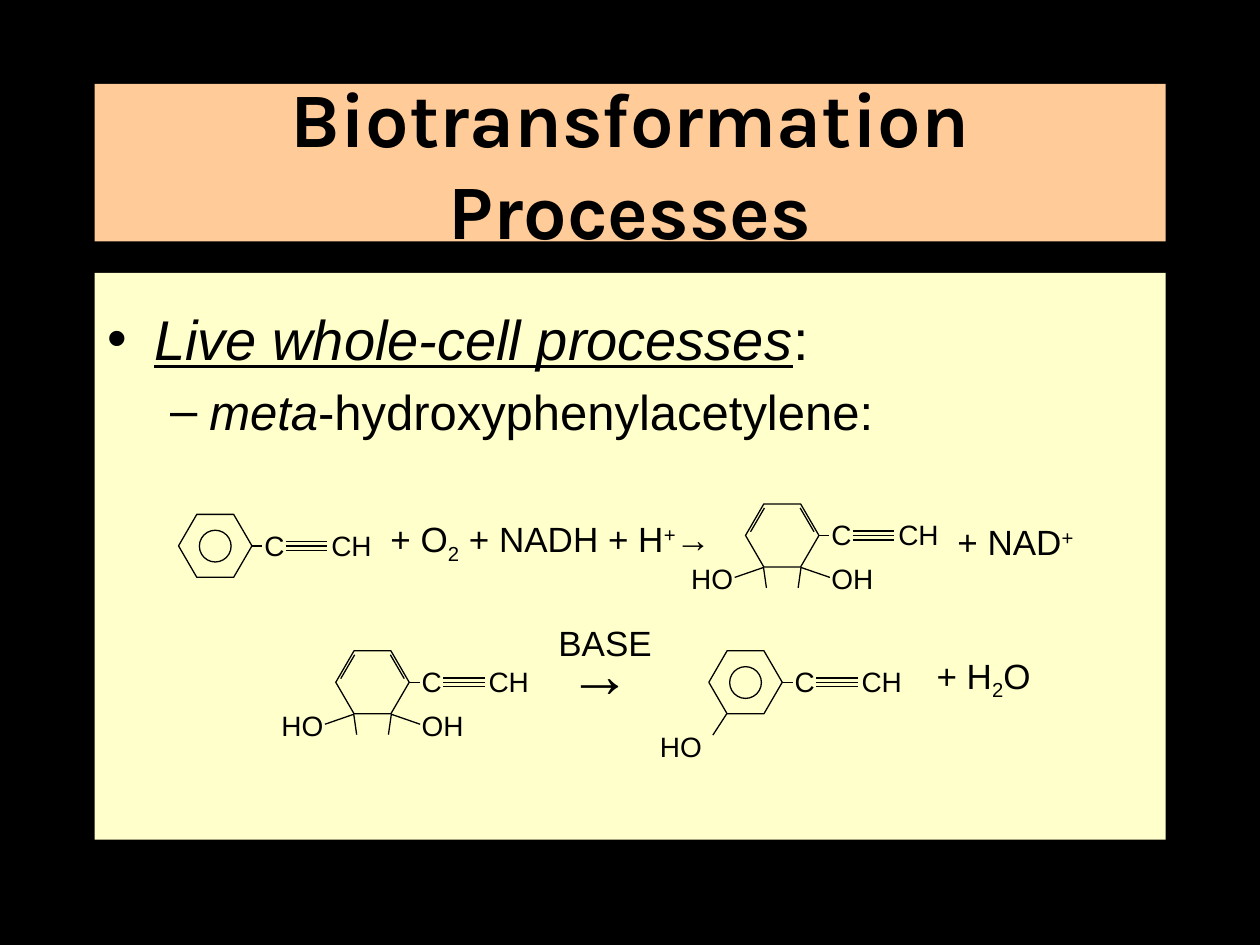
from lxml.etree import SubElement
from pptx import Presentation
from pptx.dml.color import RGBColor
from pptx.enum.shapes import MSO_CONNECTOR, MSO_SHAPE
from pptx.enum.text import MSO_ANCHOR, PP_ALIGN
from pptx.oxml.ns import qn
from pptx.util import Cm, Pt

COLORS = {"page": "000000", "title": "FFCC99", "body": "FFFFCC", "ink": "000000"}
RING_WIDTH, RING_HEIGHT = 1.48, 1.27
LABEL_WIDTH = 1.22
SUB, SUPER = {"baseline": "-25000"}, {"baseline": "30000"}
ITALIC = {"i": "1"}


def color(name):
    return RGBColor.from_string(COLORS[name])


def add_panel(page, top, height, fill):
    box = page.shapes.add_shape(
        MSO_SHAPE.RECTANGLE, Cm(1.91), Cm(top), Cm(21.59), Cm(height))
    box.shadow.inherit = False
    box.fill.solid()
    box.fill.fore_color.rgb = color(fill)
    box.line.fill.background()
    box.text_frame.word_wrap = True
    return box


def write(para, spans, size, font="Arial", align=PP_ALIGN.LEFT):
    para.alignment = align
    para.font.size = Pt(size)
    para.font.name = font
    para.font.color.rgb = color("ink")
    for text, attributes in spans:
        span = para.add_run()
        span.text = text
        for key, value in attributes.items():
            span._r.get_or_add_rPr().set(key, value)


def add_bullet(para, mark, margin, hang, space):
    para.space_before = Pt(space)
    properties = para._p.get_or_add_pPr()
    properties.set("marL", str(Cm(margin)))
    properties.set("indent", str(-Cm(hang)))
    SubElement(properties, qn("a:buFont")).set("typeface", "Arial")
    SubElement(properties, qn("a:buChar")).set("char", mark)


def add_text(shapes, left, top, width, height, spans, size, align=PP_ALIGN.LEFT, wrap=False):
    box = shapes.add_textbox(Cm(left), Cm(top), Cm(width), Cm(height))
    frame = box.text_frame
    frame.word_wrap = wrap
    frame.vertical_anchor = MSO_ANCHOR.MIDDLE
    write(frame.paragraphs[0], spans, size, align=align)
    return frame


def add_outline(shapes, kind, left, top, width, height):
    shape = shapes.add_shape(kind, Cm(left), Cm(top), Cm(width), Cm(height))
    shape.shadow.inherit = False
    shape.fill.background()
    shape.line.color.rgb = color("ink")
    shape.line.width = Pt(0.75)
    return shape


class Molecule:
    def __init__(self, page, left, top):
        self.shapes = page.shapes.add_group_shape().shapes
        self.left, self.top = left, top
        ring = add_outline(
            self.shapes, MSO_SHAPE.HEXAGON, left, top, RING_WIDTH, RING_HEIGHT)
        ring.adjustments[0] = 0.29
        self.add_alkyne()

    def add_bond(self, x1, y1, x2, y2):
        bond = self.shapes.add_connector(
            MSO_CONNECTOR.STRAIGHT, Cm(self.left + x1), Cm(self.top + y1),
            Cm(self.left + x2), Cm(self.top + y2))
        bond.line.color.rgb = color("ink")
        bond.line.width = Pt(0.75)
        SubElement(bond._element.spPr, qn("a:effectLst"))

    def add_mirrored_bond(self, x1, y1, x2, y2):
        self.add_bond(x1, y1, x2, y2)
        self.add_bond(RING_WIDTH - x1, y1, RING_WIDTH - x2, y2)

    def add_label(self, text, x, y, align=PP_ALIGN.LEFT):
        frame = add_text(self.shapes, self.left + x, self.top + y, LABEL_WIDTH, 0.89,
                         [(text, {})], 16, align)
        if align == PP_ALIGN.RIGHT:
            frame.margin_left = 0
        else:
            frame.margin_right = 0

    def add_alkyne(self):
        middle = RING_HEIGHT / 2
        self.add_bond(RING_WIDTH, middle, 1.69, middle)
        for offset in (-0.09, 0, 0.09):
            self.add_bond(2.16, middle + offset, 3, middle + offset)
        self.add_label("C", RING_WIDTH, 0.17)
        self.add_label("CH", 2.83, 0.17)

    def add_aromatic_circle(self):
        add_outline(self.shapes, MSO_SHAPE.OVAL,
                    self.left + 0.42, self.top + 0.32, 0.64, 0.64)

    def add_diol(self):
        self.add_mirrored_bond(0.38, 0.08, 0.1, 0.56)
        self.add_mirrored_bond(0.36, 1.28, -0.22, 1.48)
        self.add_mirrored_bond(0.36, 1.27, 0.42, 1.69)
        self.add_label("HO", -LABEL_WIDTH, 1.06, PP_ALIGN.RIGHT)
        self.add_label("OH", RING_WIDTH, 1.06)

    def add_hydroxyl(self):
        self.add_bond(0.36, 1.27, 0.08, 1.7)
        self.add_label("HO", 0.11 - LABEL_WIDTH, 1.48, PP_ALIGN.RIGHT)


def add_title(page):
    frame = add_panel(page, 1.69, 3.18, "title").text_frame
    frame.vertical_anchor = MSO_ANCHOR.MIDDLE
    para = frame.paragraphs[0]
    write(para, [("Biotransformation Processes", {})], 44, "Karla", PP_ALIGN.CENTER)
    para.font.bold = True


def add_body(page):
    frame = add_panel(page, 5.5, 11.43, "body").text_frame
    frame.vertical_anchor = MSO_ANCHOR.TOP
    frame.margin_top = Cm(0.64)
    heading = frame.paragraphs[0]
    add_bullet(heading, "•", 0.95, 0.95, 6.4)
    write(heading, [("Live whole-cell processes", {"i": "1", "u": "sng"}), (":", {})], 32)
    product = frame.add_paragraph()
    product.level = 1
    add_bullet(product, "–", 2.06, 0.79, 5.6)
    write(product, [("meta", ITALIC), ("-hydroxyphenylacetylene:", {})], 28)


def add_oxidation(page):
    Molecule(page, 3.6, 10.37).add_aromatic_circle()
    Molecule(page, 15.03, 10.16).add_diol()
    add_text(page.shapes, 7.62, 10.37, 7.2, 1.1,
             [("+ O", {}), ("2", SUB), (" + NADH + H", {}), ("+", SUPER), ("→", {})], 20)
    add_text(page.shapes, 19.05, 10.37, 2.87, 1.1, [("+ NAD", {}), ("+", SUPER)], 20)


def add_dehydration(page):
    Molecule(page, 6.77, 13.12).add_diol()
    phenol = Molecule(page, 14.29, 13.12)
    phenol.add_aromatic_circle()
    phenol.add_hydroxyl()
    frame = add_text(page.shapes, 11, 12.7, 2.4, 1.68, [("BASE", {})], 20,
                     PP_ALIGN.CENTER, True)
    para = frame.paragraphs[0]
    para.line_spacing = 0.6
    para.add_line_break()
    arrow = para.add_run()
    arrow.text = "→"
    arrow.font.size = Pt(36)
    para.add_run().text = " "
    add_text(page.shapes, 18.63, 13.12, 2.44, 1.1,
             [("+ H", {}), ("2", SUB), ("O", {})], 20)


def main():
    deck = Presentation()
    deck.slide_width, deck.slide_height = Cm(25.4), Cm(19.05)
    page = deck.slides.add_slide(deck.slide_layouts[6])
    page.background.fill.solid()
    page.background.fill.fore_color.rgb = color("page")
    add_title(page)
    add_body(page)
    add_oxidation(page)
    add_dehydration(page)
    deck.save("out.pptx")


if __name__ == "__main__":
    main()
